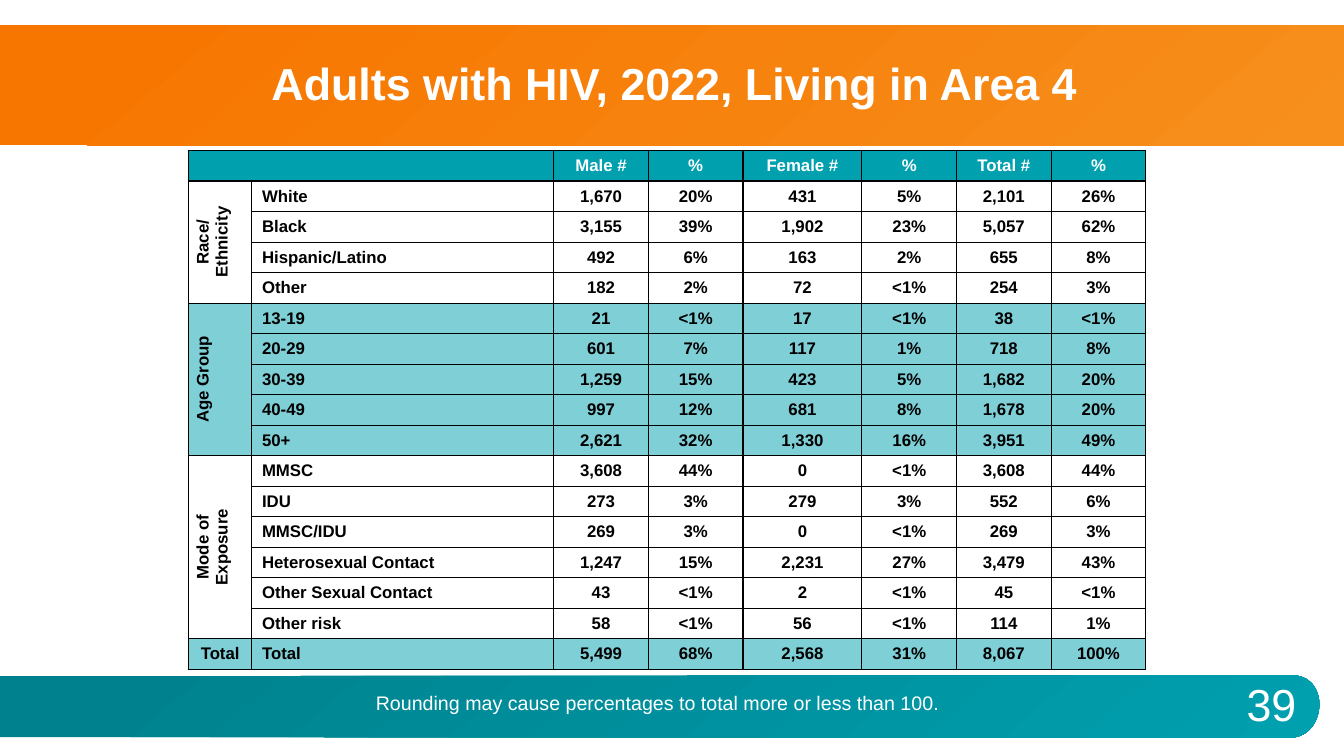
import lxml.etree
import pptx
import pptx.dml.color
import pptx.enum.text
import pptx.oxml.ns
import pptx.util

Pt = pptx.util.Pt
RGBColor = pptx.dml.color.RGBColor
ALIGN = pptx.enum.text.PP_ALIGN
MIDDLE = pptx.enum.text.MSO_ANCHOR.MIDDLE
TOP = pptx.enum.text.MSO_ANCHOR.TOP

WHITE = RGBColor(0xFF, 0xFF, 0xFF)
BLACK = RGBColor(0x00, 0x00, 0x00)
TEAL = RGBColor(0x00, 0xA0, 0xAF)
DARK_TEAL = RGBColor(0x00, 0x82, 0x8E)
LIGHT_TEAL = RGBColor(0x7F, 0xCF, 0xD7)
ORANGE = RGBColor(0xF7, 0x76, 0x00)
LIGHT_ORANGE = RGBColor(0xF7, 0x8F, 0x1C)

TITLE_FORMAT = {"name": "Arial", "size": Pt(32), "bold": True}
NUMBER_FORMAT = {"name": "Arial", "size": Pt(32), "bold": False}
NOTE_FORMAT = {"name": "Arial", "size": Pt(14), "bold": False}
CELL_FORMAT = {"name": "Arial", "size": Pt(12), "bold": True}

COLUMN_WIDTHS = [45.4, 215.6, 67.6, 67.6, 85, 67.6, 67.6, 67.6]
HEADER_HEIGHT, ROW_HEIGHT = 22, 21.8
HEADINGS = ["Male #", "%", "Female #", "%", "Total #", "%"]

# Each group: label lines, fill, rows
GROUPS = [
    (["Race/", "Ethnicity"], WHITE, [
        ["White", "1,670", "20%", "431", "5%", "2,101", "26%"],
        ["Black", "3,155", "39%", "1,902", "23%", "5,057", "62%"],
        ["Hispanic/Latino", "492", "6%", "163", "2%", "655", "8%"],
        ["Other", "182", "2%", "72", "<1%", "254", "3%"],
    ]),
    (["Age Group"], LIGHT_TEAL, [
        ["13-19", "21", "<1%", "17", "<1%", "38", "<1%"],
        ["20-29", "601", "7%", "117", "1%", "718", "8%"],
        ["30-39", "1,259", "15%", "423", "5%", "1,682", "20%"],
        ["40-49", "997", "12%", "681", "8%", "1,678", "20%"],
        ["50+", "2,621", "32%", "1,330", "16%", "3,951", "49%"],
    ]),
    (["Mode of", "Exposure"], WHITE, [
        ["MMSC", "3,608", "44%", "0", "<1%", "3,608", "44%"],
        ["IDU", "273", "3%", "279", "3%", "552", "6%"],
        ["MMSC/IDU", "269", "3%", "0", "<1%", "269", "3%"],
        ["Heterosexual Contact", "1,247", "15%", "2,231", "27%", "3,479", "43%"],
        ["Other Sexual Contact", "43", "<1%", "2", "<1%", "45", "<1%"],
        ["Other risk", "58", "<1%", "56", "<1%", "114", "1%"],
    ]),
    (["Total"], LIGHT_TEAL, [
        ["Total", "5,499", "68%", "2,568", "31%", "8,067", "100%"],
    ]),
]


def write(para, lines, values, color, align=ALIGN.CENTER):
    para.alignment = align
    for index, line in enumerate(lines):
        if index:
            para.add_line_break()
        span = para.add_run()
        span.text = line
        for name, value in values.items():
            setattr(span.font, name, value)
        span.font.color.rgb = color


def paint_gradient(shape, *colors):
    shape.shadow.inherit = False
    shape.line.fill.background()
    shape.fill.gradient()
    shape.fill.gradient_angle = 310
    for stop, position, color in zip(shape.fill.gradient_stops, (0.09, 1), colors):
        stop.position = position
        stop.color.rgb = color


def add_title_band(page):
    band = page.shapes.add_shape(1, 0, Pt(18), Pt(960), Pt(85.7))
    paint_gradient(band, ORANGE, LIGHT_ORANGE)


def add_footer_band(page):
    # Rounded right end: points along a cubic curve
    curve = [(921.6, 482.4), (950.4, 481), (948.2, 526.3), (921.6, 527)]
    steps = 32
    outline = []
    for step in range(steps + 1):
        t = step / steps
        weights = ((1 - t) ** 3, 3 * t * (1 - t) ** 2, 3 * t * t * (1 - t), t ** 3)
        outline.append([sum(w * point[axis] for w, point in zip(weights, curve))
                        for axis in (0, 1)])
    outline += [(0, 526.5), (0, 483)]
    corners = [(Pt(x), Pt(y)) for x, y in outline]
    builder = page.shapes.build_freeform(*corners[0])
    builder.add_line_segments(corners[1:], close=True)
    paint_gradient(builder.convert_to_shape(), DARK_TEAL, TEAL)


def fill_title(page, text):
    title = page.shapes.title
    page.shapes._spTree.append(title._element)
    place = {"left": 53.3, "top": 18.7, "width": 857.5, "height": 85}
    for name, value in place.items():
        setattr(title, name, Pt(value))
    frame = title.text_frame
    frame.auto_size = pptx.enum.text.MSO_AUTO_SIZE.NONE
    frame.vertical_anchor = MIDDLE
    frame.paragraphs[0].line_spacing = 0.9
    write(frame.paragraphs[0], [text], TITLE_FORMAT, WHITE)


def add_text(page, text, place, values, anchor):
    box = page.shapes.add_textbox(*map(Pt, place))
    box.text_frame.word_wrap = True
    box.text_frame.vertical_anchor = anchor
    write(box.text_frame.paragraphs[0], [text], values, WHITE)


def add_borders(cell):
    properties = cell._tc.get_or_add_tcPr()
    for index, side in enumerate(("lnL", "lnR", "lnT", "lnB")):
        line = lxml.etree.Element(pptx.oxml.ns.qn("a:" + side), w=str(Pt(0.85)))
        fill = lxml.etree.SubElement(line, pptx.oxml.ns.qn("a:solidFill"))
        lxml.etree.SubElement(fill, pptx.oxml.ns.qn("a:srgbClr"), val=str(BLACK))
        properties.insert(index, line)


def format_cell(cell, fill):
    cell.fill.solid()
    cell.fill.fore_color.rgb = fill
    cell.vertical_anchor = MIDDLE
    cell.margin_top = cell.margin_bottom = 0
    add_borders(cell)


def add_group(table, first, label, fill, rows):
    for row, values in enumerate(rows, first):
        for column in range(len(COLUMN_WIDTHS)):
            format_cell(table.cell(row, column), fill)
        for column, value in enumerate(values, 1):
            align = ALIGN.LEFT if column == 1 else ALIGN.CENTER
            para = table.cell(row, column).text_frame.paragraphs[0]
            write(para, [value], CELL_FORMAT, BLACK, align)
    head = table.cell(first, 0)
    write(head.text_frame.paragraphs[0], label, CELL_FORMAT, BLACK)
    if len(rows) > 1:
        head.merge(table.cell(first + len(rows) - 1, 0))
        head.margin_top = head.margin_bottom = Pt(3.6)
        head._tc.get_or_add_tcPr().set("vert", "vert270")


def add_case_table(page):
    count = 1 + sum(len(rows) for _, _, rows in GROUPS)
    height = HEADER_HEIGHT + ROW_HEIGHT * (count - 1)
    table = page.shapes.add_table(count, len(COLUMN_WIDTHS), Pt(134.6), Pt(107.3),
                                  Pt(sum(COLUMN_WIDTHS)), Pt(height)).table
    table.first_row = table.horz_banding = False
    for column, width in zip(table.columns, COLUMN_WIDTHS):
        column.width = Pt(width)
    for index, row in enumerate(table.rows):
        row.height = Pt(ROW_HEIGHT if index else HEADER_HEIGHT)

    # Header row
    for column in range(len(COLUMN_WIDTHS)):
        format_cell(table.cell(0, column), TEAL)
    for column, heading in enumerate(HEADINGS, 2):
        para = table.cell(0, column).text_frame.paragraphs[0]
        write(para, [heading], CELL_FORMAT, WHITE)
    table.cell(0, 0).merge(table.cell(0, 1))

    # Groups
    first = 1
    for label, fill, rows in GROUPS:
        add_group(table, first, label, fill, rows)
        first += len(rows)


def main():
    deck = pptx.Presentation()
    deck.slide_width, deck.slide_height = Pt(960), Pt(540)
    page = deck.slides.add_slide(deck.slide_layouts[5])

    # Bands and slide number
    add_footer_band(page)
    add_title_band(page)
    add_text(page, "39", (869, 481, 78.5, 42.5), NUMBER_FORMAT, MIDDLE)

    # Title, table and note
    fill_title(page, "Adults with HIV, 2022, Living in Area 4")
    add_case_table(page)
    add_text(page, "Rounding may cause percentages to total more or less than 100.",
             (76.3, 490.3, 787, 24.5), NOTE_FORMAT, TOP)

    deck.save("out.pptx")


if __name__ == "__main__":
    main()
